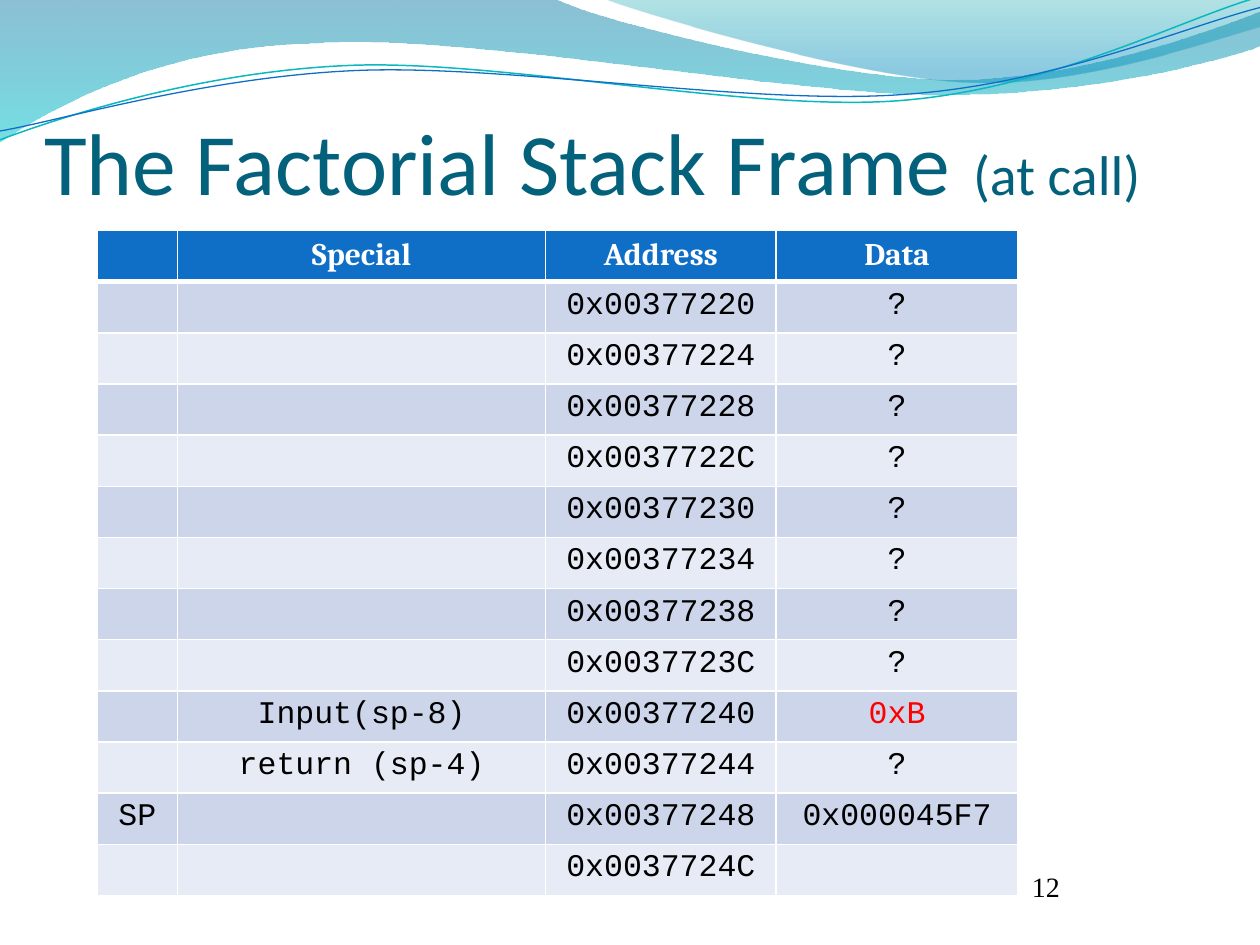
from lxml.etree import SubElement
from pptx import Presentation
from pptx.dml.color import RGBColor
from pptx.enum.text import MSO_ANCHOR, MSO_AUTO_SIZE, PP_ALIGN
from pptx.oxml import parse_xml
from pptx.oxml.ns import nsdecls, qn
from pptx.util import Inches, Pt

color = RGBColor.from_string
presentation = Presentation()
presentation.slide_width = Inches(10)
presentation.slide_height = Inches(7.5)
width, height = presentation.slide_width, presentation.slide_height
slide = presentation.slides.add_slide(presentation.slide_layouts[5])
slide.background.fill.solid()
slide.background.fill.fore_color.rgb = color("FFFFFF")


def add_wave(start, segments, closed):
    """Draw an outline in inches; six numbers are a Bezier curve, two a straight line."""
    points = [segment[i:i + 2] for segment in segments for i in range(0, len(segment), 2)]
    builder = slide.shapes.build_freeform(start[0] * 1000, start[1] * 1000, Inches(1) / 1000)
    builder.add_line_segments([(x * 1000, y * 1000) for x, y in points], close=closed)
    shape = builder.convert_to_shape()
    shape.shadow.inherit = False
    # Join each curve's three straight steps into one cubic Bezier
    steps = iter(list(shape.element.iter(qn("a:lnTo"))))
    for segment in segments:
        first = next(steps)
        if len(segment) == 6:
            curve = parse_xml(f'<a:cubicBezTo {nsdecls("a")}/>')
            first.addprevious(curve)
            for step in (first, next(steps), next(steps)):
                curve.append(step[0])
                step.getparent().remove(step)
    return shape


def add_run(paragraph, text, size, font, hex_color, bold=False):
    run = paragraph.add_run()
    run.text = text
    run.font.size = Pt(size)
    run.font.name = font
    run.font.bold = bold
    run.font.color.rgb = color(hex_color)


# Filled waves: start, segments, gradient stops (position, colour, opacity %)
filled_waves = [
    ((0, 0),
     [(4.4, -0.01), (4.76, 0.17, 6.64, 0.63, 7.58, 0.63), (8.53, 0.63, 9.58, 0.26, 10, 0.09),
      (10.01, 0.36), (9.83, 0.44, 8.7, 0.76, 7.46, 0.75), (6.22, 0.75, 3.82, 0.28, 2.57, 0.34),
      (1.29, 0.36, 0.46, 0.83, -0.01, 1.13), (0, 0)],
     [(0, "0074A1", 45), (1, "00C6CF", 55)]),
    ((4.79, -0.01),
     [(5.09, 0.11, 6.82, 0.62, 7.69, 0.65), (8.56, 0.69, 9.61, 0.32, 10, 0.21), (10, 0),
      (4.79, -0.01)],
     [(0, "00A1A9", 30), (0.8, "008BBF", 45)]),
]
for start, segments, stops in filled_waves:
    wave = add_wave(start, segments, True)
    wave.line.fill.background()
    wave.fill.gradient()
    wave.fill.gradient_angle = 270
    for stop, (position, hex_color, opacity) in zip(wave.fill.gradient_stops, stops):
        stop.position = position
        stop.color.rgb = color(hex_color)
    for element, (_, _, opacity) in zip(wave.element.iter(qn("a:gs")), stops):
        SubElement(element[0], qn("a:alpha"), val=str(opacity * 1000))

line_waves = [
    ((0, 1.11),
     [(0.48, 0.93, 1.58, 0.57, 2.77, 0.52), (3.95, 0.47, 5.93, 0.89, 7.13, 0.8),
      (8.33, 0.71, 9.38, 0.15, 9.98, -0.02)], "0AB8BF", 0.85),
    ((0, 1.04),
     [(0.47, 0.96, 1.64, 0.61, 2.83, 0.56), (4.03, 0.51, 5.97, 0.84, 7.17, 0.75),
      (8.36, 0.67, 9.41, 0.21, 10, 0.06)], "0F6FC6", 0.75),
]
for start, segments, hex_color, weight in line_waves:
    wave = add_wave(start, segments, False)
    wave.fill.background()
    wave.line.color.rgb = color(hex_color)
    wave.line.width = Pt(weight)

# Slide number
number = slide.shapes.add_textbox(
    int(width * 0.819), int(height * 0.9), int(width * 0.108), int(height * 0.056))
frame = number.text_frame
frame.word_wrap = True
frame.vertical_anchor = MSO_ANCHOR.BOTTOM
frame.margin_left = frame.margin_right = frame.margin_top = frame.margin_bottom = 0
add_run(frame.paragraphs[0], "12", 16, "Times New Roman", "000000")

# Title
title = slide.shapes.title
title.left, title.top = int(width * 0.025), int(height * 0.1)
title.width, title.height = int(width * 0.942), int(height * 0.09)
frame = title.text_frame
frame.auto_size = MSO_AUTO_SIZE.NONE
frame.word_wrap = True
frame.vertical_anchor = MSO_ANCHOR.TOP
frame.margin_top = Inches(0.05)
paragraph = frame.paragraphs[0]
paragraph.alignment = PP_ALIGN.LEFT
for text, size in [("The Factorial Stack Frame", 50), (" ", 54), ("(at call)", 32)]:
    add_run(paragraph, text, size, "Calibri", "04617B")

# Stack table: one word of memory per row
first_address = 0x00377220
specials = {8: "Input(sp-8)", 9: "return (sp-4)"}
data = {8: "0xB", 10: "0x000045F7", 11: ""}
rows = [("", "Special", "Address", "Data")]
for index in range(12):
    pointer = "SP" if index == 10 else ""
    address = f"0x{first_address + 4 * index:08X}"
    rows.append((pointer, specials.get(index, ""), address, data.get(index, "?")))

column_widths = [0.64, 2.92, 1.83, 1.92]
row_height = Inches(5.28 / len(rows))
table = slide.shapes.add_table(
    len(rows), len(column_widths), Inches(0.77), Inches(1.83),
    Inches(sum(column_widths)), row_height * len(rows)).table
for column, column_width in zip(table.columns, column_widths):
    column.width = Inches(column_width)

for row_index, values in enumerate(rows):
    header = row_index == 0
    table.rows[row_index].height = row_height
    for column_index, text in enumerate(values):
        cell = table.cell(row_index, column_index)
        properties = cell._tc.get_or_add_tcPr()
        for side in "LRTB":
            thick = (header and side == "B") or (row_index == 1 and side == "T")
            properties.append(parse_xml(
                f'<a:ln{side} {nsdecls("a")} w="{Pt(3 if thick else 1)}"><a:solidFill>'
                f'<a:srgbClr val="FFFFFF"/></a:solidFill></a:ln{side}>'))
        cell.fill.solid()
        band = "CCD5EA" if row_index % 2 else "E7EBF5"
        cell.fill.fore_color.rgb = color("0F6FC6" if header else band)
        paragraph = cell.text_frame.paragraphs[0]
        paragraph.alignment = PP_ALIGN.CENTER
        if not text:
            continue
        if header:
            add_run(paragraph, text, 18, "Cambria", "FFFFFF", bold=True)
        else:
            add_run(paragraph, text, 18, "Courier New", "FF0000" if text == "0xB" else "000000")

presentation.save("out.pptx")
